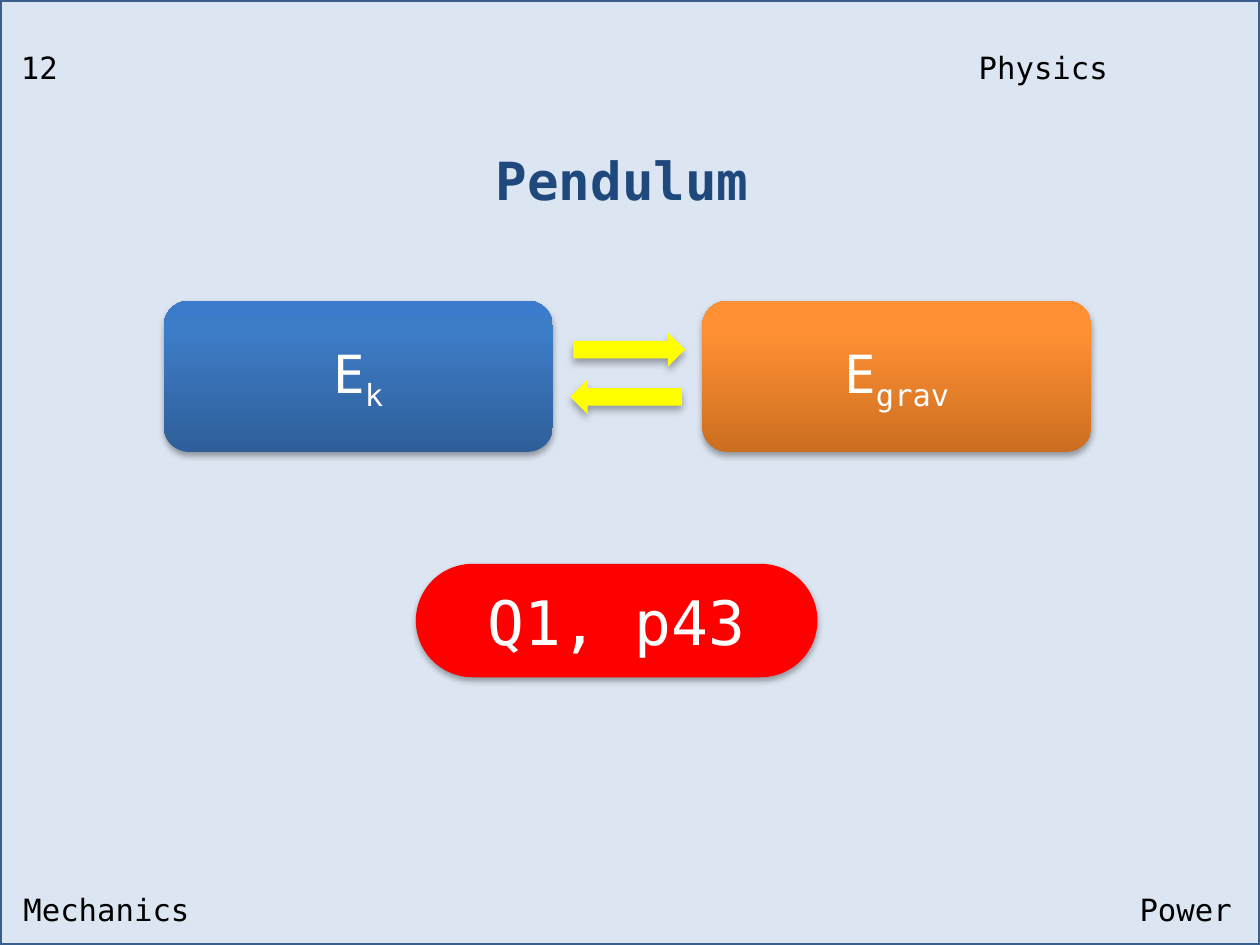
"""Build the Pendulum slide: kinetic and gravitational energy exchange."""
from lxml.etree import SubElement
from pptx import Presentation
from pptx.dml.color import RGBColor
from pptx.enum.shapes import MSO_SHAPE
from pptx.enum.text import MSO_ANCHOR, MSO_AUTO_SIZE, PP_ALIGN
from pptx.oxml.ns import qn
from pptx.util import Inches, Pt

FONT = "DejaVu Sans Mono"
COLORS = {"background": "DCE6F2", "border": "3A5F8C", "title": "1F497D", "label": "000000",
          "white": "FFFFFF", "arrow": "FFFF00", "question": "FF0000", "shadow": "000000"}
TITLE = "Pendulum"
CORNER_LABELS = [
    ("Mechanics", (0.05, 5.61, 2.25, 0.34), PP_ALIGN.LEFT),
    ("Physics", (5.5, 0.26, 2.25, 0.34), PP_ALIGN.CENTER),
    ("12", (0, 0.26, 0.5, 0.34), PP_ALIGN.CENTER),
    ("Power", (3.5, 5.61, 4.42, 0.34), PP_ALIGN.RIGHT),
]
ENERGIES = [
    ("E", "k", 1.04, [(0, "2F5F99"), (80, "3D7CC7"), (100, "3A7CCB")]),
    ("E", "grav", 4.46, [(0, "CC6E20"), (80, "FF9034"), (100, "FF9136")]),
]
ARROWS = [(3.64, 2.11, 0), (3.62, 2.41, 180)]
QUESTION = "Q1, p43"
BOX_SHADOW = (35, 3.1, 1.8)
ARROW_SHADOW = (32, 3.5, 2.2)


def rgb(name):
    return RGBColor.from_string(COLORS[name])


def format_text(frame, size, color, align, bold=False):
    paragraph = frame.paragraphs[0]
    paragraph.alignment = align
    for run in paragraph.runs:
        run.font.name = FONT
        run.font.size = Pt(size)
        run.font.bold = bold
        run.font.color.rgb = rgb(color)


def add_block(slide, preset, box, shadow):
    block = slide.shapes.add_shape(preset, *map(Inches, box))
    block.line.fill.background()
    block.shadow.inherit = False
    opacity, blur, distance = shadow
    effects = block._element.spPr.find(qn("a:effectLst"))
    outer = SubElement(effects, qn("a:outerShdw"), blurRad=str(Pt(blur)),
                       dist=str(Pt(distance)), dir="5400000", rotWithShape="0")
    tint = SubElement(outer, qn("a:srgbClr"), val=COLORS["shadow"])
    SubElement(tint, qn("a:alpha"), val=str(opacity * 1000))
    block.text_frame.vertical_anchor = MSO_ANCHOR.MIDDLE
    return block


def fill_solid(block, color):
    block.fill.solid()
    block.fill.fore_color.rgb = rgb(color)


def fill_gradient(block, stops):
    block.fill.gradient()
    block.fill.gradient_angle = 90
    stop_list = block._element.spPr.find(".//" + qn("a:gsLst"))
    for default in list(stop_list):
        stop_list.remove(default)
    for position, color in stops:
        stop = SubElement(stop_list, qn("a:gs"), pos=str(position * 1000))
        SubElement(stop, qn("a:srgbClr"), val=color)


def main():
    deck = Presentation()
    deck.slide_width, deck.slide_height = Inches(8), Inches(6)
    slide = deck.slides.add_slide(deck.slide_layouts[5])
    slide.background.fill.solid()
    slide.background.fill.fore_color.rgb = rgb("background")

    border = slide.shapes.add_shape(MSO_SHAPE.RECTANGLE, 0, 0, deck.slide_width, deck.slide_height)
    border.fill.background()
    border.line.color.rgb = rgb("border")
    border.line.width = Pt(2)
    border.shadow.inherit = False

    title = slide.shapes.title
    title.left, title.top, title.width, title.height = map(Inches, (1.24, 0.89, 5.42, 0.5))
    title.text_frame.text = TITLE
    title.text_frame.auto_size = MSO_AUTO_SIZE.NONE
    title.text_frame.vertical_anchor = MSO_ANCHOR.TOP
    format_text(title.text_frame, 24, "title", PP_ALIGN.CENTER, bold=True)

    for text, box, align in CORNER_LABELS:
        label = slide.shapes.add_textbox(*map(Inches, box)).text_frame
        label.word_wrap = True
        label.text = text
        format_text(label, 14, "label", align)

    for symbol, subscript, left, stops in ENERGIES:
        energy = add_block(slide, MSO_SHAPE.ROUNDED_RECTANGLE, (left, 1.91, 2.47, 0.96), BOX_SHADOW)
        fill_gradient(energy, stops)
        energy.text_frame.text = symbol
        lowered = energy.text_frame.paragraphs[0].add_run()
        lowered.text = subscript
        format_text(energy.text_frame, 24, "white", PP_ALIGN.CENTER)
        lowered.font._element.set("baseline", "-25000")

    for left, top, rotation in ARROWS:
        arrow = add_block(slide, MSO_SHAPE.RIGHT_ARROW, (left, top, 0.71, 0.22), ARROW_SHADOW)
        fill_solid(arrow, "arrow")
        arrow.rotation = rotation

    question = add_block(slide, MSO_SHAPE.ROUNDED_RECTANGLE, (2.64, 3.58, 2.55, 0.72), BOX_SHADOW)
    question.adjustments[0] = 0.5
    fill_solid(question, "question")
    question.text_frame.text = QUESTION
    format_text(question.text_frame, 28, "white", PP_ALIGN.CENTER)

    deck.save("out.pptx")


if __name__ == "__main__":
    main()
